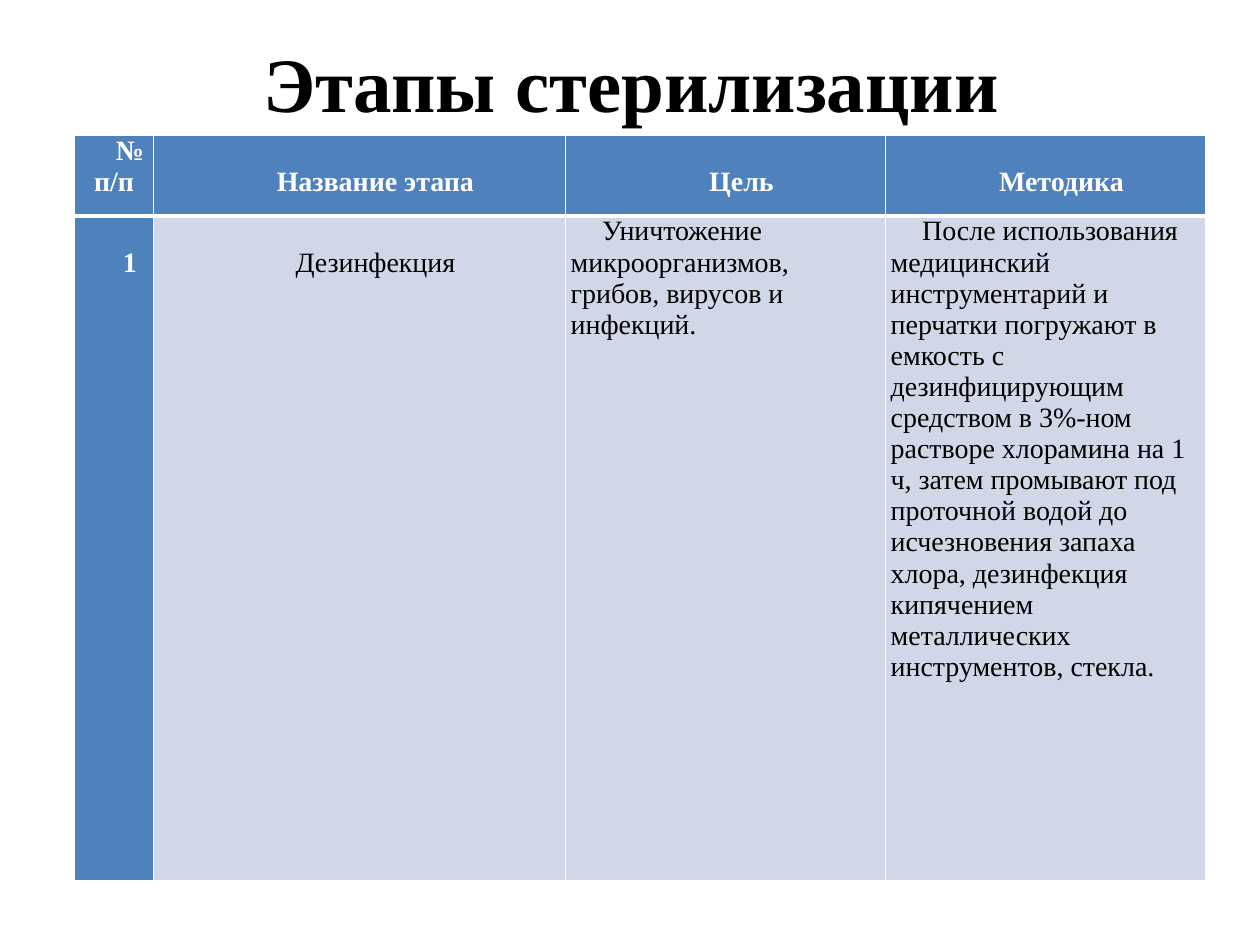
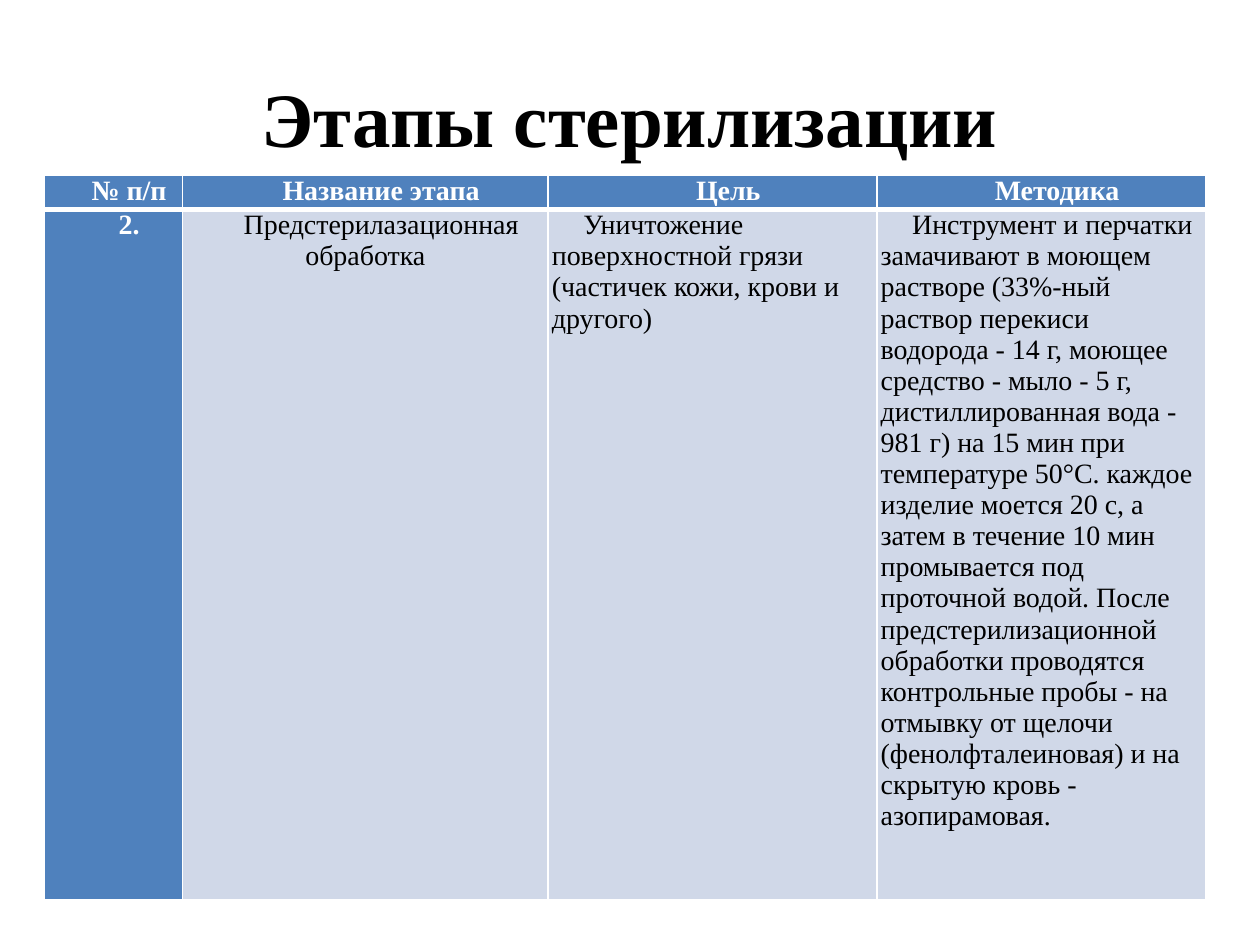
from pptx import Presentation
from pptx.dml.color import RGBColor
from pptx.enum.text import MSO_ANCHOR, PP_ALIGN
from pptx.oxml import parse_xml
from pptx.oxml.ns import nsdecls
from pptx.util import Inches, Pt

BLUE = RGBColor(0x4F, 0x81, 0xBD)
PALE = RGBColor(0xD0, 0xD8, 0xE8)
WHITE = RGBColor(0xFF, 0xFF, 0xFF)
BLACK = RGBColor(0, 0, 0)
FACE = "Times New Roman"
TITLE = "Этапы стерилизации"
HEADS = ["Название этапа", "Цель", "Методика"]
WIDE, HIGH = Inches(10), Inches(7.5)
INDENT = Inches(0.25)


def across(share):
    return int(WIDE * share / 100)


def down(share):
    return int(HIGH * share / 100)


def set_font(para, size, color, bold):
    font = para.font
    font.name, font.size, font.bold = FACE, Pt(size), bold
    font.color.rgb = color


def add_title(slide, left, top, width, height):
    box = slide.shapes.add_textbox(across(left), down(top), across(width), down(height))
    frame = box.text_frame
    frame.word_wrap = True
    frame.vertical_anchor = MSO_ANCHOR.MIDDLE
    para = frame.paragraphs[0]
    para.text = TITLE
    para.alignment = PP_ALIGN.CENTER
    set_font(para, 44, BLACK, True)


def add_edges(cell, row):
    props = cell._tc.get_or_add_tcPr()
    thick = "B" if row == 0 else "T"
    for side in "LRTB":
        line = Pt(3 if side == thick else 1)
        props.append(parse_xml(
            f'<a:ln{side} {nsdecls("a")} w="{line}"><a:solidFill>'
            f'<a:srgbClr val="{WHITE}"/></a:solidFill></a:ln{side}>'))


def fill_cell(cell, text, row, col, inset, tall):
    label = row == 0 or col == 0
    prose = row == 1 and col > 1
    add_edges(cell, row)
    cell.fill.solid()
    cell.fill.fore_color.rgb = BLUE if label else PALE
    cell.margin_left = cell.margin_right = Inches(inset)
    cell.margin_top = cell.margin_bottom = 0
    para = cell.text_frame.paragraphs[0]
    para.text = text
    para.alignment = PP_ALIGN.LEFT if prose else PP_ALIGN.CENTER
    props = para._p.get_or_add_pPr()
    props.set("marL", "0")
    props.set("indent", str(INDENT))
    if tall and not prose and (row, col) != (0, 0):
        para.line_spacing = 2.0
    set_font(para, 16, WHITE if label else BLACK, label)


def add_grid(slide, left, top, cols, rows, data, inset, tall=False):
    shape = slide.shapes.add_table(
        len(rows), len(cols), across(left), down(top),
        across(sum(cols)), down(sum(rows)))
    table = shape.table
    table.horz_banding = False
    for col, share in enumerate(cols):
        table.columns[col].width = across(share)
    for row, share in enumerate(rows):
        table.rows[row].height = down(share)
        for col, text in enumerate(data[row]):
            fill_cell(table.cell(row, col), text, row, col, inset, tall)


def main():
    deck = Presentation()
    deck.slide_width, deck.slide_height = WIDE, HIGH
    blank = deck.slide_layouts[6]

    slide = deck.slides.add_slide(blank)
    add_title(slide, 5.1, 2.8, 90, 11.6)
    add_grid(slide, 5.9, 14.35, [6.3, 32.7, 25.4, 25.4], [8.5, 70.3], [
        ["№п/п", *HEADS],
        ["1", "Дезинфекция",
         "Уничтожение микроорганизмов, грибов, вирусов и инфекций.",
         "После использования медицинский инструментарий и перчатки "
         "погружают в емкость с дезинфицирующим средством в 3%-ном "
         "растворе хлорамина на 1 ч, затем промывают под проточной водой "
         "до исчезновения запаха хлора, дезинфекция кипячением "
         "металлических инструментов, стекла."],
    ], 0.04, tall=True)

    slide = deck.slides.add_slide(blank)
    add_title(slide, 5, 4, 90, 16.67)
    add_grid(slide, 3.5, 18.6, [11, 29, 26.1, 26.1], [3.6, 73], [
        ["№ п/п", *HEADS],
        ["2.", "Предстерилазационная обработка",
         "Уничтожение поверхностной грязи (частичек кожи, крови и другого)",
         "Инструмент и перчатки замачивают в моющем растворе (33%-ный "
         "раствор перекиси водорода - 14 г, моющее средство - мыло - "
         "5 г, дистиллированная вода - 981 г) на 15 мин при температуре "
         "50°С. каждое изделие моется 20 с, а затем в течение 10 мин "
         "промывается под проточной водой. После предстерилизационной "
         "обработки проводятся контрольные пробы - на отмывку от щелочи "
         "(фенолфталеиновая) и на скрытую кровь - азопирамовая."],
    ], 0.03)

    deck.save("out.pptx")


if __name__ == "__main__":
    main()
